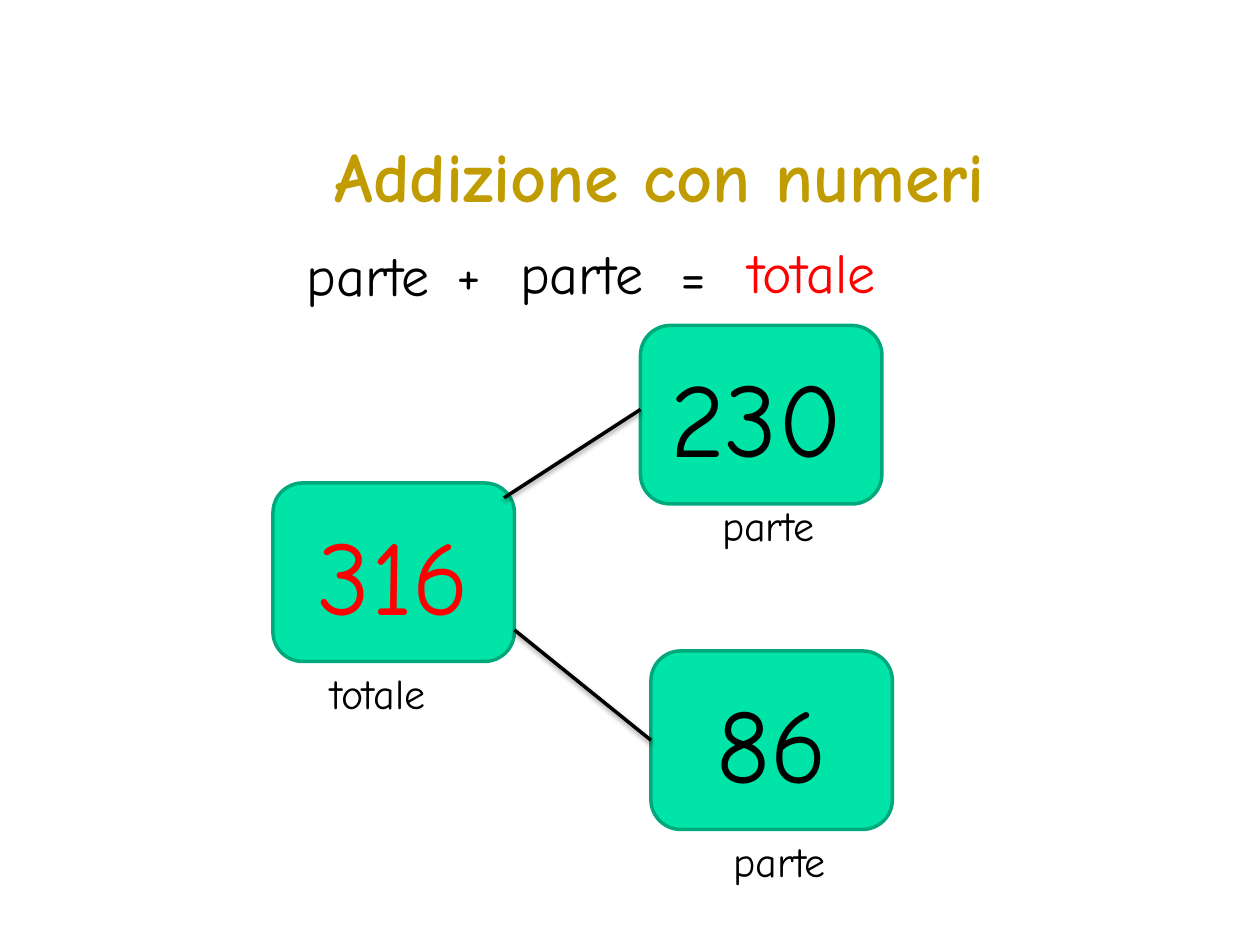
from dataclasses import dataclass

from lxml.etree import SubElement
from pptx import Presentation
from pptx.dml.color import RGBColor
from pptx.enum.shapes import MSO_CONNECTOR, MSO_SHAPE
from pptx.enum.text import MSO_ANCHOR, MSO_AUTO_SIZE, PP_ALIGN
from pptx.oxml.ns import qn
from pptx.slide import Slide
from pptx.text.text import TextFrame
from pptx.util import Pt


@dataclass(frozen=True)
class Theme:
    font: str = "Comic Neue"
    black: RGBColor = RGBColor(0, 0, 0)
    red: RGBColor = RGBColor(0xFF, 0, 0)
    gold: RGBColor = RGBColor(0xC0, 0x9C, 0)
    tile_fill: RGBColor = RGBColor(0, 0xE4, 0xA8)
    tile_line: RGBColor = RGBColor(0, 0xA9, 0x7C)
    title_size: float = 40
    formula_size: float = 32
    number_size: float = 60
    caption_size: float = 24
    line_width: float = 2


@dataclass(frozen=True)
class Frame:
    left: float
    top: float
    width: float
    height: float

    def lengths(self) -> tuple[Pt, Pt, Pt, Pt]:
        return Pt(self.left), Pt(self.top), Pt(self.width), Pt(self.height)


@dataclass(frozen=True)
class Label:
    text: str
    frame: Frame
    size: float
    color: RGBColor
    align: PP_ALIGN = PP_ALIGN.CENTER
    bold: bool = False


@dataclass(frozen=True)
class Tile:
    left: float
    top: float
    number: str
    number_left: float
    number_width: float
    number_color: RGBColor
    caption: str
    caption_left: float
    caption_top: float
    caption_width: float


@dataclass(frozen=True)
class Link:
    start: tuple[float, float]
    end: tuple[float, float]


THEME = Theme()
TILE_WIDTH, TILE_HEIGHT = 138, 102
NUMBER_DROP, NUMBER_HEIGHT = 12, 80
CAPTION_HEIGHT, FORMULA_HEIGHT = 36, 46

TITLE = Label("Addizione con numeri", Frame(162, 72, 430, 55.5),
              THEME.title_size, THEME.gold, bold=True)
TILES = [
    Tile(156, 276, "316", 120, 210, THEME.red, "totale", 156, 378, 120),
    Tile(366, 186, "230", 348, 168, THEME.black, "parte", 401, 282, 76),
    Tile(372, 372, "86", 390, 102, THEME.black, "parte", 407.5, 474, 76),
]
LINKS = [Link((288, 284.5), (366, 234)), Link((294, 360), (372, 423))]


def formula_label(text: str, left: float, top: float, width: float,
                  color: RGBColor = THEME.black,
                  align: PP_ALIGN = PP_ALIGN.LEFT) -> Label:
    return Label(text, Frame(left, top, width, FORMULA_HEIGHT),
                 THEME.formula_size, color, align)


FORMULA = [
    formula_label("parte", 168, 134, 96.5),
    formula_label("+", 254, 132.5, 54),
    formula_label("parte", 281.5, 133, 102, align=PP_ALIGN.CENTER),
    formula_label("=", 381.5, 134, 54),
    formula_label("totale", 420.5, 132, 168, THEME.red),
]


def write_label(text_frame: TextFrame, label: Label) -> None:
    text_frame.text = label.text
    text_frame.word_wrap = True
    text_frame.auto_size = MSO_AUTO_SIZE.NONE
    text_frame.vertical_anchor = MSO_ANCHOR.TOP
    paragraph = text_frame.paragraphs[0]
    paragraph.alignment = label.align
    font = paragraph.runs[0].font
    font.name = THEME.font
    font.size = Pt(label.size)
    font.bold = label.bold
    font.color.rgb = label.color


def add_title(page: Slide) -> None:
    title = page.shapes.title
    title.left, title.top, title.width, title.height = TITLE.frame.lengths()
    write_label(title.text_frame, TITLE)


def add_label(page: Slide, label: Label) -> None:
    box = page.shapes.add_textbox(*label.frame.lengths())
    write_label(box.text_frame, label)


def add_tile(page: Slide, tile: Tile) -> None:
    """Draw a rounded tile with its number and the caption below."""
    frame = Frame(tile.left, tile.top, TILE_WIDTH, TILE_HEIGHT)
    shape = page.shapes.add_shape(MSO_SHAPE.ROUNDED_RECTANGLE, *frame.lengths())
    shape.shadow.inherit = False
    shape.fill.solid()
    shape.fill.fore_color.rgb = THEME.tile_fill
    shape.line.color.rgb = THEME.tile_line
    shape.line.width = Pt(THEME.line_width)
    add_label(page, Label(
        tile.number,
        Frame(tile.number_left, tile.top + NUMBER_DROP,
              tile.number_width, NUMBER_HEIGHT),
        THEME.number_size, tile.number_color))
    add_label(page, Label(
        tile.caption,
        Frame(tile.caption_left, tile.caption_top,
              tile.caption_width, CAPTION_HEIGHT),
        THEME.caption_size, THEME.black))


def add_link(page: Slide, link: Link) -> None:
    """Draw a black line with a soft shadow below it."""
    line = page.shapes.add_connector(
        MSO_CONNECTOR.STRAIGHT, *map(Pt, link.start + link.end))
    line.line.color.rgb = THEME.black
    line.line.width = Pt(THEME.line_width)
    effects = SubElement(line._element.spPr, qn("a:effectLst"))
    shadow = SubElement(effects, qn("a:outerShdw"), blurRad=str(Pt(3.1)),
                        dist=str(Pt(1.6)), dir="5400000", rotWithShape="0")
    color = SubElement(shadow, qn("a:srgbClr"), val=str(THEME.black))
    SubElement(color, qn("a:alpha"), val="38000")


def main() -> None:
    deck = Presentation()
    deck.slide_width, deck.slide_height = Pt(720), Pt(540)
    page = deck.slides.add_slide(deck.slide_layouts.get_by_name("Title Only"))
    add_title(page)
    for label in FORMULA:
        add_label(page, label)
    for tile in TILES:
        add_tile(page, tile)
    for link in LINKS:
        add_link(page, link)
    deck.save("out.pptx")


if __name__ == "__main__":
    main()
